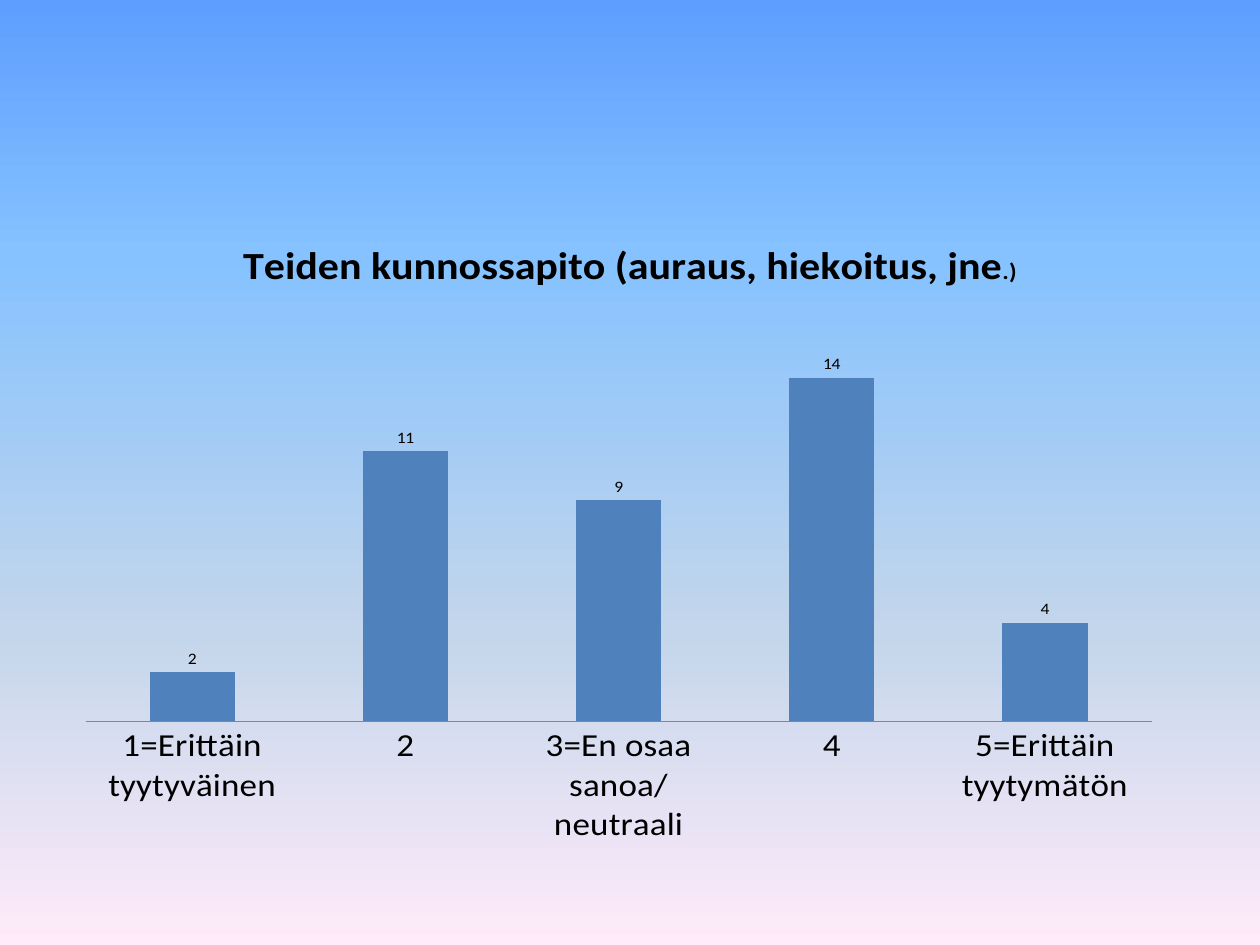
import copy

import pptx
import pptx.chart.data
import pptx.dml.color
import pptx.enum.chart
import pptx.oxml
import pptx.oxml.ns
import pptx.util
from pptx.util import Cm

RGBColor = pptx.dml.color.RGBColor
BLACK = RGBColor(0x00, 0x00, 0x00)
BAR_BLUE = RGBColor(0x4F, 0x81, 0xBD)
AXIS_GREY = RGBColor(0x86, 0x86, 0x86)
SKY = [
    (0, RGBColor(0x5E, 0x9E, 0xFF)),
    (0.27, RGBColor(0x85, 0xC2, 0xFF)),
    (0.67, RGBColor(0xC4, 0xD6, 0xEB)),
    (1, RGBColor(0xFF, 0xEB, 0xFA)),
]

TITLE_RUNS = [("Teiden kunnossapito (auraus, hiekoitus, jne", 24), (".)", 14)]
ANSWERS = {
    "1=Erittäin tyytyväinen": 2,
    "2": 11,
    "3=En osaa sanoa/neutraali": 9,
    "4": 14,
    "5=Erittäin tyytymätön": 4,
}


class SurveySlide:
    font_name = "Calibri"

    def __init__(self, deck):
        self.slide = deck.slides.add_slide(deck.slide_layouts[6])

    def style_font(self, font, size, bold=False):
        font.name = self.font_name
        font.size = pptx.util.Pt(size)
        font.bold = bold
        font.color.rgb = BLACK

    def add_background(self, stops):
        """Fill the background with a gradient running from top to bottom."""
        fill = self.slide.background.fill
        fill.gradient()
        fill.gradient_angle = 270
        stop_list = self.slide.element.find(".//" + pptx.oxml.ns.qn("a:gsLst"))
        while len(stop_list) < len(stops):
            stop_list.append(copy.deepcopy(stop_list[-1]))
        for stop, (position, color) in zip(fill.gradient_stops, stops):
            stop.position = position
            stop.color.rgb = color

    def add_column_chart(self, answers, title_runs, left, top, width, height):
        chart_data = pptx.chart.data.CategoryChartData()
        chart_data.categories = list(answers)
        chart_data.add_series("Series 1", list(answers.values()))
        chart = self.slide.shapes.add_chart(
            pptx.enum.chart.XL_CHART_TYPE.COLUMN_CLUSTERED,
            left, top, width, height, chart_data,
        ).chart
        self.style_font(chart.font, 10)
        chart.has_legend = False
        self.add_title(chart, title_runs)
        self.style_axes(chart)
        self.style_columns(chart.plots[0])
        return chart

    def add_title(self, chart, title_runs):
        paragraph = chart.chart_title.text_frame.paragraphs[0]
        for text, size in title_runs:
            run = paragraph.add_run()
            run.text = text
            self.style_font(run.font, size, bold=True)
        chart.chart_title.include_in_layout = False

    def style_axes(self, chart):
        answer_axis = chart.category_axis
        answer_axis.major_tick_mark = pptx.enum.chart.XL_TICK_MARK.NONE
        answer_axis.format.line.color.rgb = AXIS_GREY
        self.style_font(answer_axis.tick_labels.font, 20)
        count_axis = chart.value_axis
        count_axis.has_major_gridlines = False
        count_axis.visible = False

    def style_columns(self, plot):
        plot.gap_width = 150
        plot.overlap = -25
        plot.vary_by_categories = False
        column_fill = plot.series[0].format.fill
        column_fill.solid()
        column_fill.fore_color.rgb = BAR_BLUE
        plot.has_data_labels = True
        labels = plot.data_labels
        labels.show_value = True
        labels.position = pptx.enum.chart.XL_LABEL_POSITION.OUTSIDE_END
        self.style_font(labels.font, 10)

    def place_plot(self, chart, x, y, w, h):
        """Fix the inner plot area, in fractions of the chart."""
        layout = pptx.oxml.parse_xml(
            f'<c:layout {pptx.oxml.ns.nsdecls("c")}><c:manualLayout>'
            '<c:layoutTarget val="inner"/>'
            '<c:xMode val="edge"/><c:yMode val="edge"/>'
            f'<c:x val="{x}"/><c:y val="{y}"/><c:w val="{w}"/><c:h val="{h}"/>'
            '</c:manualLayout></c:layout>'
        )
        plot_area = chart.element.find(".//" + pptx.oxml.ns.qn("c:plotArea"))
        for old_layout in plot_area.findall(pptx.oxml.ns.qn("c:layout")):
            plot_area.remove(old_layout)
        plot_area.insert(0, layout)


def main():
    deck = pptx.Presentation()
    deck.slide_width, deck.slide_height = Cm(25.4), Cm(19.05)
    survey = SurveySlide(deck)
    survey.add_background(SKY)
    satisfaction = survey.add_column_chart(
        ANSWERS, TITLE_RUNS, Cm(1.27), Cm(4.45), Cm(22.86), Cm(12.57)
    )
    survey.place_plot(satisfaction, 0.02, 0.19, 0.94, 0.69)
    deck.save("out.pptx")


if __name__ == "__main__":
    main()
